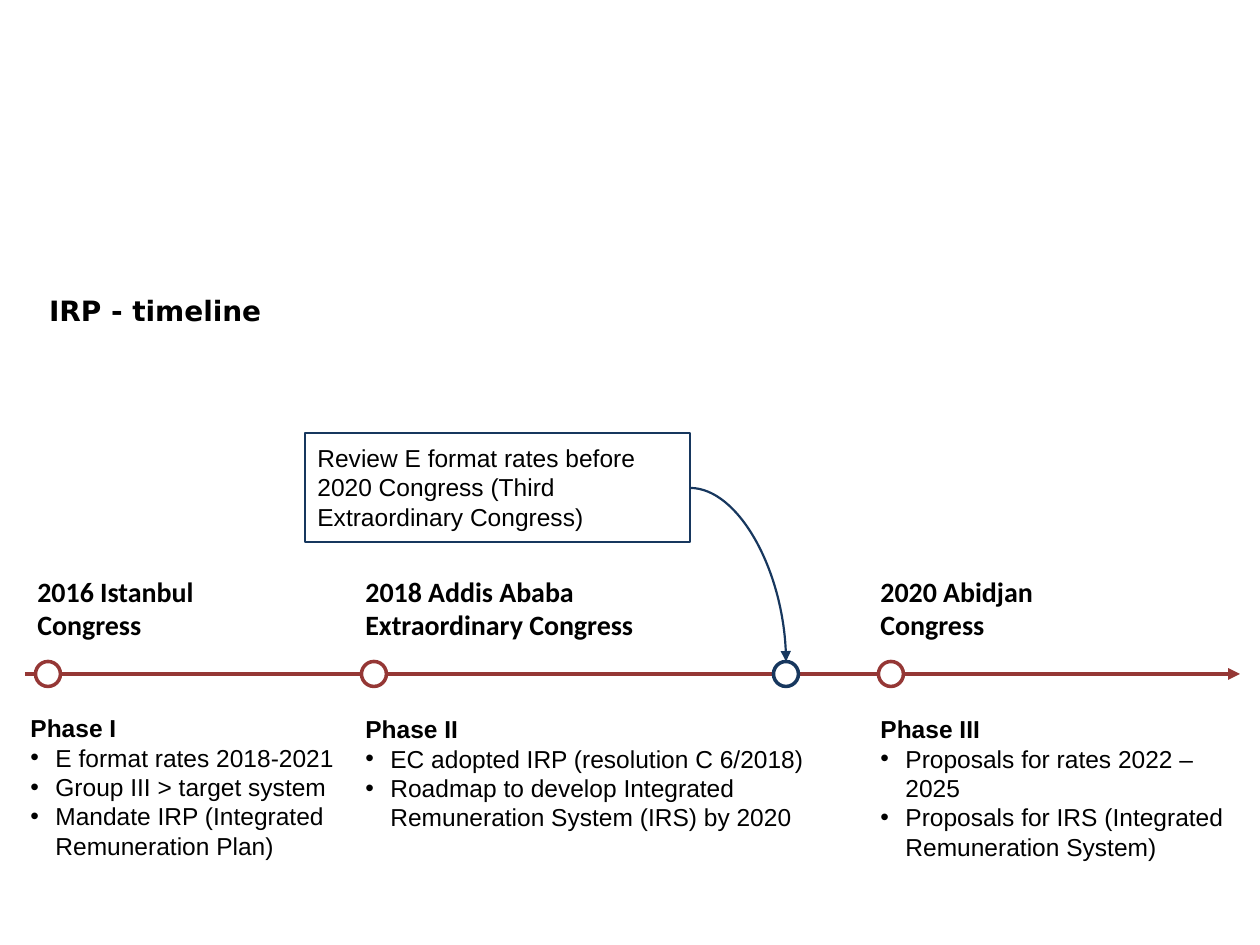
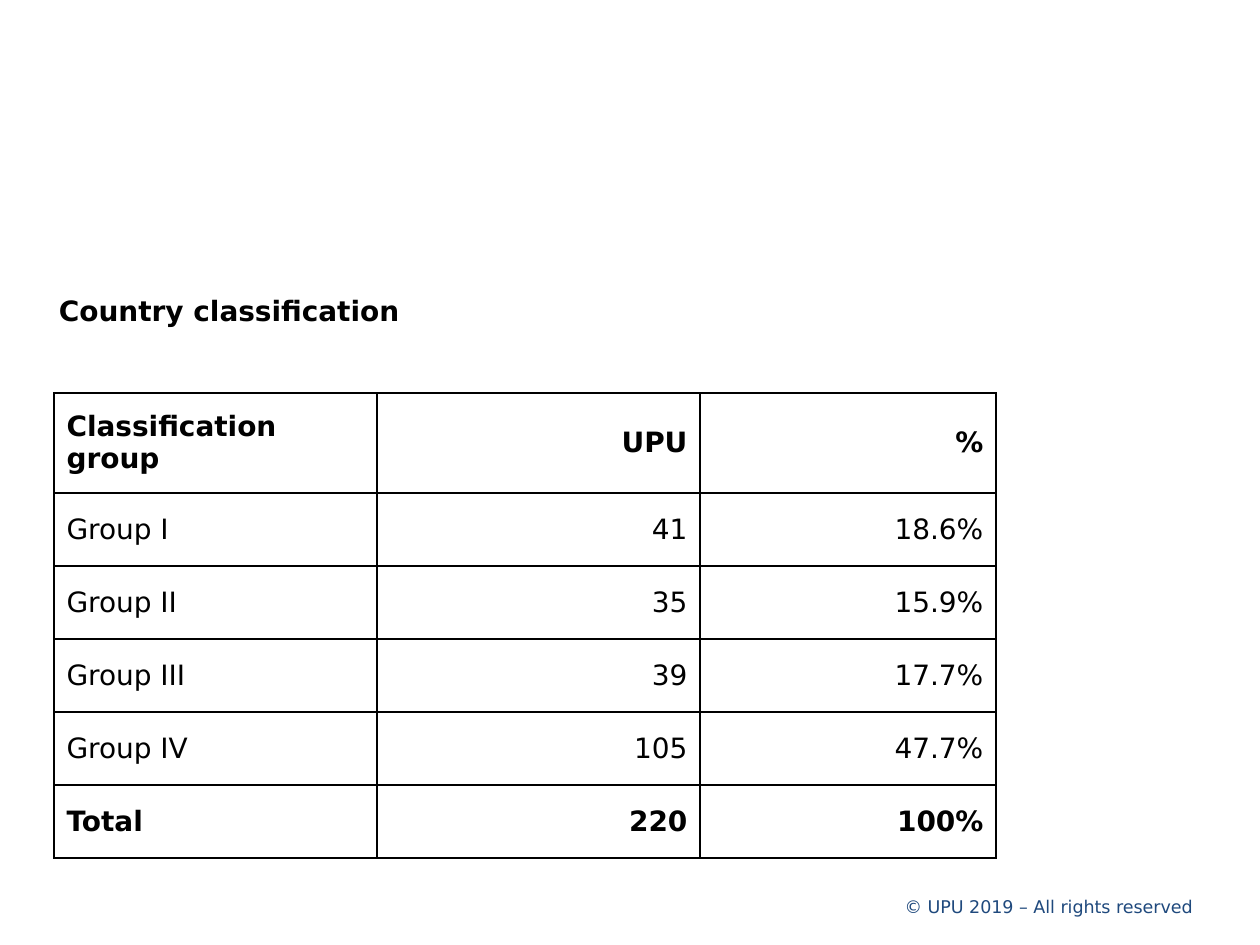
"""Build the IRP timeline and the country classification slides."""
import pptx
import pptx.util
import pptx.dml.color
import pptx.enum.shapes
import pptx.enum.text
import pptx.oxml
import pptx.oxml.ns

PX = 914400 / 126
COLORS = {"ink": "000000", "paper": "FFFFFF", "red": "953735",
          "navy": "17375E", "foot": "1F497D"}
SANS, HEAD, BODY = "DejaVu Sans", "Calibri", "Arial"

STEPS = [
    {"dot": 48, "name": (25, 228), "heads": ["2016 Istanbul", "Congress"],
     "note": (18, 707, 374, 161), "phase": "Phase I",
     "items": ["E format rates 2018-2021", "Group III > target system",
               "Mandate IRP (Integrated Remuneration Plan)"]},
    {"dot": 374, "name": (353, 297), "heads": ["2018 Addis Ababa", "Extraordinary Congress"],
     "note": (353, 708, 476, 131), "phase": "Phase II",
     "items": ["EC adopted IRP (resolution C 6/2018)",
               "Roadmap to develop Integrated Remuneration System (IRS) by 2020"]},
    {"dot": 891, "name": (868, 297), "heads": ["2020 Abidjan", "Congress"],
     "note": (868, 708, 397, 161), "phase": "Phase III",
     "items": ["Proposals for rates 2022 – 2025",
               "Proposals for IRS (Integrated Remuneration System)"]},
]
REVIEW = "Review E format rates before 2020 Congress (Third Extraordinary Congress)"
GROUPS = [
    ("Classification group", "UPU", "%"),
    ("Group I", "41", "18.6%"),
    ("Group II", "35", "15.9%"),
    ("Group III", "39", "17.7%"),
    ("Group IV", "105", "47.7%"),
    ("Total", "220", "100%"),
]
COLS = (323, 323, 296)
TOP, ROW = 100, 73
AXIS, DOT, MARK = 674, 25, 786


def px(n):
    return pptx.util.Emu(round(n * PX))


def rgb(name):
    return pptx.dml.color.RGBColor.from_string(COLORS[name])


def child(node, tag, **attrs):
    part = pptx.oxml.parse_xml(f"<a:{tag} {pptx.oxml.ns.nsdecls('a')}/>")
    for key, val in attrs.items():
        part.set(key, str(val))
    node.append(part)
    return part


def style(para, font, size, bold=False, color="ink", align=None):
    para.alignment = align
    for run in para.runs:
        run.font.name = font
        run.font.size = pptx.util.Pt(size)
        run.font.bold = bold
        run.font.color.rgb = rgb(color)


def write(slide, box, lines, font, size, bold=False, color="ink", align=None):
    shape = slide.shapes.add_textbox(*map(px, box))
    frame = shape.text_frame
    frame.word_wrap = True
    frame.text = "\n".join(lines)
    for para in frame.paragraphs:
        style(para, font, size, bold, color, align)
    return shape


def title(slide, box, text):
    shape = write(slide, box, [text], SANS, 16, True)
    frame = shape.text_frame
    frame.margin_left = frame.margin_right = frame.margin_top = frame.margin_bottom = 0
    return shape


def bullets(slide, box, head, items):
    shape = write(slide, box, [head, *items], BODY, 14)
    first, *rest = shape.text_frame.paragraphs
    first.runs[0].font.bold = True
    for para in rest:
        props = para._p.get_or_add_pPr()
        props.set("marL", str(px(25)))
        props.set("indent", str(px(-25)))
        child(props, "buFont", typeface=BODY)
        child(props, "buChar", char="•")


def dot(slide, mid, color):
    oval = pptx.enum.shapes.MSO_SHAPE.OVAL
    shape = slide.shapes.add_shape(oval, px(mid - DOT / 2), px(AXIS - DOT / 2), px(DOT), px(DOT))
    shape.shadow.inherit = False
    shape.fill.solid()
    shape.fill.fore_color.rgb = rgb("paper")
    shape.line.color.rgb = rgb(color)
    shape.line.width = pptx.util.Pt(2)


def arrow(slide, kind, ends, color, width):
    link = slide.shapes.add_connector(kind, *map(px, ends))
    link.line.color.rgb = rgb(color)
    link.line.width = pptx.util.Pt(width)
    child(link.line._get_or_add_ln(), "tailEnd", type="triangle")
    child(link._element.spPr, "effectLst")
    return link


def border(cell):
    props = cell._tc.get_or_add_tcPr()
    for side in ("lnL", "lnR", "lnT", "lnB"):
        line = child(props, side, w=12700)
        child(child(line, "solidFill"), "srgbClr", val=COLORS["ink"])


def timeline(slide):
    kinds = pptx.enum.shapes.MSO_CONNECTOR
    back = title(slide, (49, 294, 1191, 635), "IRP - timeline")
    back.fill.solid()
    back.fill.fore_color.rgb = rgb("paper")
    arrow(slide, kinds.STRAIGHT, (25, AXIS, 1240, AXIS), "red", 2.25)
    for step in STEPS:
        left, wide = step["name"]
        dot(slide, step["dot"], "red")
        write(slide, (left, 568, wide, 81), step["heads"], HEAD, 16, True)
        bullets(slide, step["note"], step["phase"], step["items"])
    dot(slide, MARK, "navy")
    box = write(slide, (305, 433, 385, 109), [REVIEW], BODY, 14)
    box.text_frame.margin_top = box.text_frame.margin_bottom = px(10)
    box.line.color.rgb = rgb("navy")
    box.line.width = pptx.util.Pt(1.25)
    curve = arrow(slide, kinds.CURVE, (690, 488, MARK, AXIS - DOT / 2), "navy", 1.25)
    curve._element.spPr.prstGeom.set("prst", "curvedConnector2")


def classes(slide):
    right = pptx.enum.text.PP_ALIGN.RIGHT
    write(slide, (759, 890, 446, 34), ["© UPU 2019 – All rights reserved"],
          SANS, 10, color="foot", align=right)
    last = len(GROUPS) - 1
    high = TOP + ROW * last
    grid = slide.shapes.add_table(len(GROUPS), len(COLS), px(54), px(393),
                                  px(sum(COLS)), px(high)).table
    grid.first_row = grid.horz_banding = False
    for col, wide in zip(grid.columns, COLS):
        col.width = px(wide)
    for r, row in enumerate(GROUPS):
        grid.rows[r].height = px(ROW if r else TOP)
        for c, text in enumerate(row):
            cell = grid.cell(r, c)
            cell.text_frame.text = text
            cell.vertical_anchor = pptx.enum.text.MSO_ANCHOR.MIDDLE
            style(cell.text_frame.paragraphs[0], SANS, 16, r in (0, last),
                  align=right if c else None)
            border(cell)
            cell.fill.background()
    title(slide, (59, 294, 1206, 59), "Country classification")


def main():
    deck = pptx.Presentation()
    deck.slide_width, deck.slide_height = px(1260), px(945)
    for build in (timeline, classes):
        build(deck.slides.add_slide(deck.slide_layouts[6]))
    deck.save("out.pptx")


if __name__ == "__main__":
    main()
